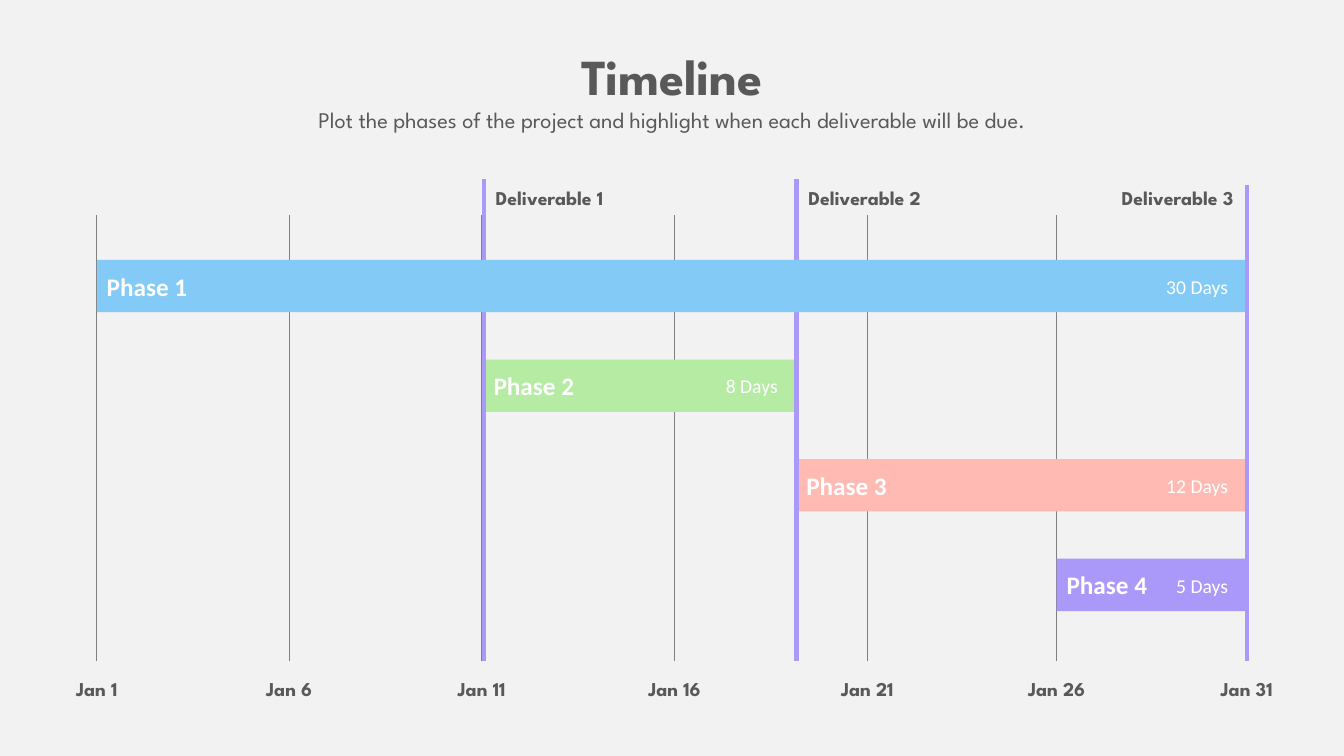
import dataclasses

import lxml.etree
import pptx
import pptx.dml.color
import pptx.enum.shapes
import pptx.enum.text
import pptx.oxml.ns
import pptx.util

Cm = pptx.util.Cm
Align = pptx.enum.text.PP_ALIGN
Anchor = pptx.enum.text.MSO_ANCHOR


@dataclasses.dataclass(frozen=True)
class Theme:
    """Colours, fonts and type sizes of the timeline."""
    background: str = "F2F2F2"
    ink: str = "595959"
    white: str = "FFFFFF"
    grid: str = "808080"
    blue: str = "84CAF7"
    green: str = "B5EBA2"
    pink: str = "FEBAB3"
    violet: str = "AA99F9"
    heading_font: str = "League Spartan"
    bar_font: str = "Calibri"
    title: int = 36
    subtitle: int = 16
    phase: int = 18
    label: int = 14
    thin: float = 0.5
    thick: float = 3


def colour(code):
    """Turn a hex code into a colour."""
    return pptx.dml.color.RGBColor.from_string(code)


class TimelinePage:
    """Draws timeline elements on one page, with lengths in centimetres."""

    def __init__(self, page, theme):
        self.page = page
        self.theme = theme
        page.background.fill.solid()
        page.background.fill.fore_color.rgb = colour(theme.background)

    def style(self, para, font, size, code, bold, align):
        para.alignment = align
        for span in para.runs:
            span.font.name = font
            span.font.size = pptx.util.Pt(size)
            span.font.bold = bold
            span.font.color.rgb = colour(code)

    def text_box(self, left, top, width, height, text):
        box = self.page.shapes.add_textbox(Cm(left), Cm(top), Cm(width), Cm(height))
        box.text_frame.word_wrap = True
        box.text_frame.auto_size = pptx.enum.text.MSO_AUTO_SIZE.SHAPE_TO_FIT_TEXT
        box.text_frame.text = text
        return box.text_frame.paragraphs

    def heading(self, title, subtitle):
        theme = self.theme
        first, second = self.text_box(3.58, 1.02, 26.72, 2.57, f"{title}\n{subtitle}")
        self.style(first, theme.heading_font, theme.title, theme.ink, True, Align.CENTER)
        self.style(second, theme.heading_font, theme.subtitle, theme.ink, False, Align.CENTER)

    def label(self, left, top, width, text, align):
        theme = self.theme
        para = self.text_box(left, top, width, 0.86, text)[0]
        self.style(para, theme.heading_font, theme.label, theme.ink, True, align)

    def vertical(self, x, top, code, weight):
        line = self.page.shapes.add_connector(
            pptx.enum.shapes.MSO_CONNECTOR.STRAIGHT, Cm(x), Cm(16.66), Cm(x), Cm(top))
        line.line.color.rgb = colour(code)
        line.line.width = pptx.util.Pt(weight)
        lxml.etree.SubElement(line._element.spPr, pptx.oxml.ns.qn("a:effectLst"))

    def tick(self, x, date):
        self.vertical(x, 5.41, self.theme.grid, self.theme.thin)
        self.label(x - 1.765, 16.94, 3.53, date, Align.CENTER)

    def deliverable(self, x, top, name, align):
        width = 5.03
        left = x - 0.08 - width if align == Align.RIGHT else x + 0.05
        self.vertical(x, top, self.theme.violet, self.theme.thick)
        self.label(left, 4.55, width, name, align)

    def phase(self, row, start, end, code, name, duration):
        theme = self.theme
        top = 6.55 + 2.51 * row
        bar = self.page.shapes.add_shape(
            pptx.enum.shapes.MSO_SHAPE.RECTANGLE, Cm(start), Cm(top), Cm(end - start), Cm(1.32))
        bar.shadow.inherit = False
        bar.fill.solid()
        bar.fill.fore_color.rgb = colour(code)
        bar.line.fill.background()
        bar.text_frame.text = name
        bar.text_frame.vertical_anchor = Anchor.MIDDLE
        self.style(bar.text_frame.paragraphs[0], theme.bar_font, theme.phase,
                   theme.white, True, Align.LEFT)
        para = self.text_box(end - 2.46, top + 0.25, 2.24, 0.86, duration)[0]
        self.style(para, theme.bar_font, theme.label, theme.white, False, Align.RIGHT)


def main():
    """Build the timeline and save it."""
    theme = Theme()
    deck = pptx.Presentation()
    deck.slide_width, deck.slide_height = Cm(33.87), Cm(19.05)
    timeline = TimelinePage(deck.slides.add_slide(deck.slide_layouts[6]), theme)
    ticks = {"Jan 1": 2.44, "Jan 6": 7.29, "Jan 11": 12.14, "Jan 16": 17,
             "Jan 21": 21.86, "Jan 26": 26.63, "Jan 31": 31.42}
    first_due, second_due, last_due = 12.19, 20.07, ticks["Jan 31"]

    timeline.heading(
        "Timeline",
        "Plot the phases of the project and highlight when each deliverable will be due.")
    for date, x in ticks.items():
        timeline.tick(x, date)
    timeline.phase(1, first_due, second_due, theme.green, "Phase 2", "8 Days")
    timeline.phase(2, second_due, last_due, theme.pink, "Phase 3", "12 Days")
    timeline.phase(3, ticks["Jan 26"], last_due, theme.violet, "Phase 4", "5 Days")
    timeline.deliverable(first_due, 4.52, "Deliverable 1", Align.LEFT)
    timeline.deliverable(second_due, 4.52, "Deliverable 2", Align.LEFT)
    timeline.phase(0, ticks["Jan 1"], last_due, theme.blue, "Phase 1", "30 Days")
    timeline.deliverable(last_due, 4.67, "Deliverable 3", Align.RIGHT)
    deck.save("out.pptx")


if __name__ == "__main__":
    main()
